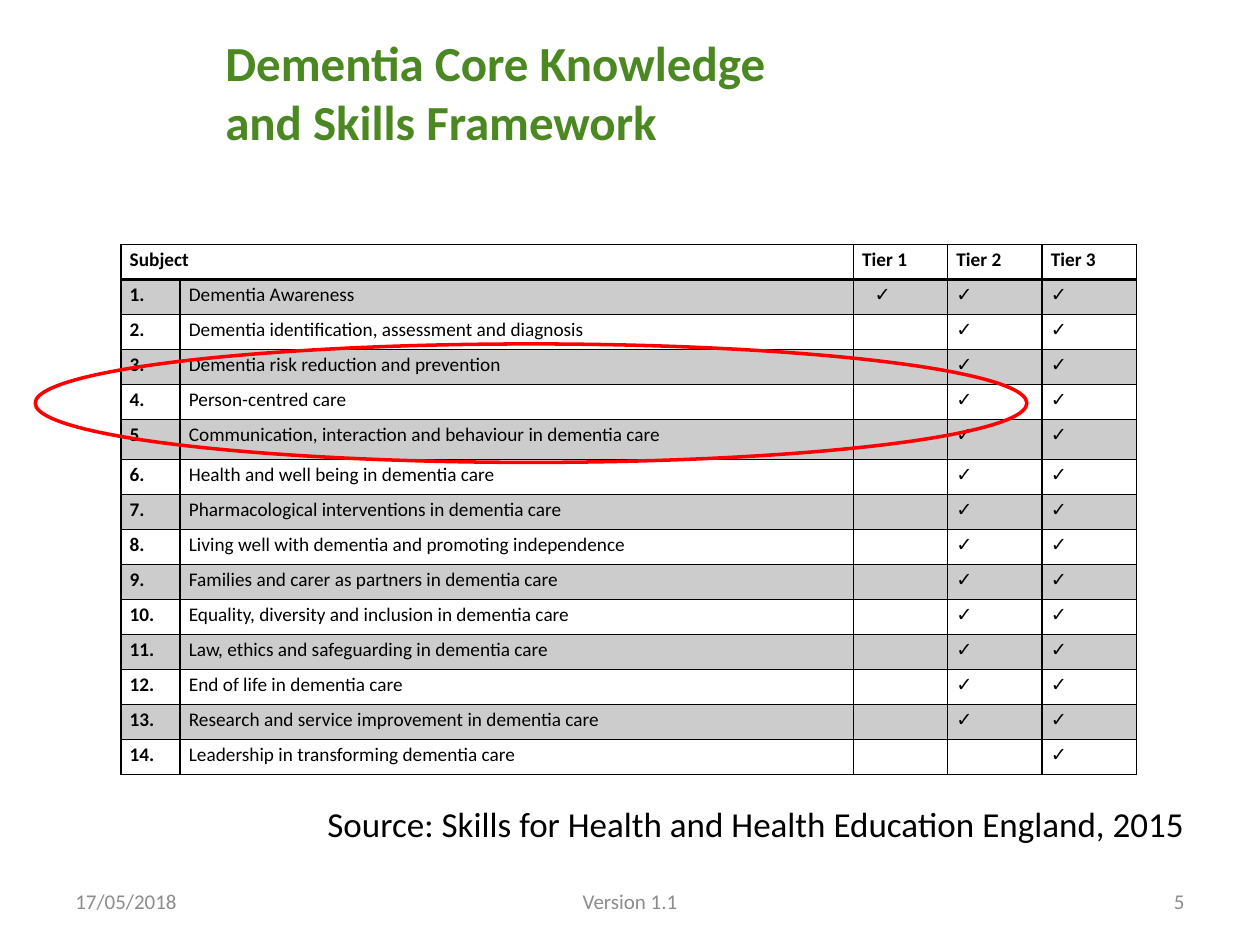
from lxml import etree
from pptx import Presentation, util as u
from pptx.dml.color import RGBColor
from pptx.enum import shapes, text
from pptx.oxml import ns

BLACK = RGBColor(0x00, 0x00, 0x00)
GREEN = RGBColor(0x4C, 0x88, 0x22)
GREY = RGBColor(0x8C, 0x8C, 0x8C)
RED = RGBColor(0xFF, 0x00, 0x00)
WIDTH, HEIGHT = 10, 7.5
TICK = "✓"
COLUMNS = (0.47, 5.35, 0.75, 0.75, 0.75)
TALL_ROW, TALL_HEIGHT = 5, 0.32
HEADER = ("Subject", "", "Tier 1", "Tier 2", "Tier 3")
SUBJECTS = (
    ("Dementia Awareness", (1, 2, 3)),
    ("Dementia identification, assessment and diagnosis", (2, 3)),
    ("Dementia risk reduction and prevention", (2, 3)),
    ("Person-centred care", (2, 3)),
    ("Communication, interaction and behaviour in dementia care", (2, 3)),
    ("Health and well being in dementia care", (2, 3)),
    ("Pharmacological interventions in dementia care", (2, 3)),
    ("Living well with dementia and promoting independence", (2, 3)),
    ("Families and carer as partners in dementia care", (2, 3)),
    ("Equality, diversity and inclusion in dementia care", (2, 3)),
    ("Law, ethics and safeguarding in dementia care", (2, 3)),
    ("End of life in dementia care", (2, 3)),
    ("Research and service improvement in dementia care", (2, 3)),
    ("Leadership in transforming dementia care", (3,)),
)


def apply(target, values):
    """Set each attribute named in a dict of format values."""
    for name, value in values.items():
        setattr(target, name, value)


def style_font(font, size, colour, bold=False):
    """Give a font the slide's typeface with a size, colour and weight."""
    apply(font, {"name": "Calibri", "size": u.Pt(size), "bold": bold})
    font.color.rgb = colour


def add_label(page, box, words, size, colour, align="LEFT", anchor="TOP", bold=False):
    """Place one paragraph of wrapped text in a box."""
    frame = page.shapes.add_textbox(*map(u.Inches, box)).text_frame
    apply(frame, {"word_wrap": True,
                  "vertical_anchor": getattr(text.MSO_ANCHOR, anchor)})
    para = frame.paragraphs[0]
    para.alignment = getattr(text.PP_ALIGN, align)
    span = para.add_run()
    span.text = words
    style_font(span.font, size, colour, bold)


def add_borders(cell, bottom):
    """Draw black lines round a cell with the given bottom width."""
    properties = cell._tc.get_or_add_tcPr()
    widths = {"lnL": 1, "lnR": 1, "lnT": 1, "lnB": bottom}
    for place, (side, width) in enumerate(widths.items()):
        line = etree.Element(ns.qn(f"a:{side}"), w=str(u.Pt(width)))
        fill = etree.SubElement(line, ns.qn("a:solidFill"))
        etree.SubElement(fill, ns.qn("a:srgbClr"), val=str(BLACK))
        properties.insert(place, line)


def shade(cell, shaded):
    """Fill a cell with black at a fifth of full strength, or leave it clear."""
    if not shaded:
        cell.fill.background()
        return
    cell.fill.solid()
    cell.fill.fore_color.rgb = BLACK
    colour = cell._tc.tcPr.find(".//" + ns.qn("a:srgbClr"))
    etree.SubElement(colour, ns.qn("a:alpha"), val="20000")


def add_tick(para, indent):
    """Mark a paragraph with a hanging tick bullet."""
    properties = para._p.get_or_add_pPr()
    hang = u.Inches(0.25)
    properties.set("marL", str(hang + u.Inches(indent)))
    properties.set("indent", str(-hang))
    etree.SubElement(properties, ns.qn("a:buFont"), typeface="Calibri")
    etree.SubElement(properties, ns.qn("a:buChar"), char=TICK)


def fill_cell(cell, words, bold, row, indent):
    """Write, shade and border one cell of the framework table."""
    apply(cell, {"margin_left": u.Inches(0.07), "margin_right": u.Inches(0.07),
                 "margin_top": 0, "margin_bottom": 0})
    para = cell.text_frame.paragraphs[0]
    para.line_spacing = 1.15
    if words == TICK:
        add_tick(para, indent)
        words = " "
    if words:
        span = para.add_run()
        span.text = words
        style_font(span.font, 11, BLACK, bold)
    else:
        etree.SubElement(para._p, ns.qn("a:endParaRPr"), sz="1100")
    shade(cell, row % 2 == 1)
    add_borders(cell, 1 if row else 2)


def add_framework(page, box):
    """Build the table of subjects and tiers in a box."""
    rows = [HEADER] + [
        (f"{number}.", name, *(TICK if tier in tiers else "" for tier in (1, 2, 3)))
        for number, (name, tiers) in enumerate(SUBJECTS, 1)]
    frame = page.shapes.add_table(len(rows), len(COLUMNS), *map(u.Inches, box))
    table = frame.table
    apply(table, {"first_row": False, "horz_banding": False})
    for column, share in zip(table.columns, COLUMNS):
        column.width = u.Inches(box[2] * share / sum(COLUMNS))
    row_height = (box[3] - TALL_HEIGHT) / (len(rows) - 1)
    for row, entries in enumerate(rows):
        table.rows[row].height = u.Inches(TALL_HEIGHT if row == TALL_ROW else row_height)
        for column, words in enumerate(entries):
            indent = 0.1 if column == 2 else 0
            fill_cell(table.cell(row, column), words, row == 0 or column == 0, row, indent)
    table.cell(0, 0).merge(table.cell(0, 1))


def add_highlight(page, box):
    """Ring the rows in a box with a red ellipse."""
    ring = page.shapes.add_shape(shapes.MSO_SHAPE.OVAL, *map(u.Inches, box))
    ring.shadow.inherit = False
    ring.fill.background()
    ring.line.color.rgb = RED
    ring.line.width = u.Pt(2)


def add_footer(page, box):
    """Set the date, version and page number along a strip."""
    left, top, width, height = box
    side, middle = width * 0.26, width * 0.35
    parts = (("17/05/2018", left, side, "LEFT"),
             ("Version 1.1", left + (width - middle) / 2, middle, "CENTER"),
             ("5", left + width - side, side, "RIGHT"))
    for words, start, span, align in parts:
        add_label(page, (start, top, span, height), words, 12, GREY, align, "MIDDLE")


def main():
    """Build and save the slide."""
    deck = Presentation()
    apply(deck, {"slide_width": u.Inches(WIDTH), "slide_height": u.Inches(HEIGHT)})
    page = deck.slides.add_slide(deck.slide_layouts[6])
    margin = WIDTH * 0.05
    inner = WIDTH - 2 * margin
    add_label(page, (margin, 6.32, inner, 0.44),
              "Source: Skills for Health and Health Education England, 2015",
              20, BLACK, "RIGHT")
    add_label(page, (1.69, 0.21, 5.12, 1.14),
              "Dementia Core Knowledge and Skills Framework", 28, GREEN, bold=True)
    add_framework(page, (0.96, 1.94, 8.06, 4.21))
    add_highlight(page, (0.28, 2.73, 7.87, 0.94))
    add_footer(page, (margin, 6.95, inner, 0.4))
    deck.save("out.pptx")


if __name__ == "__main__":
    main()
